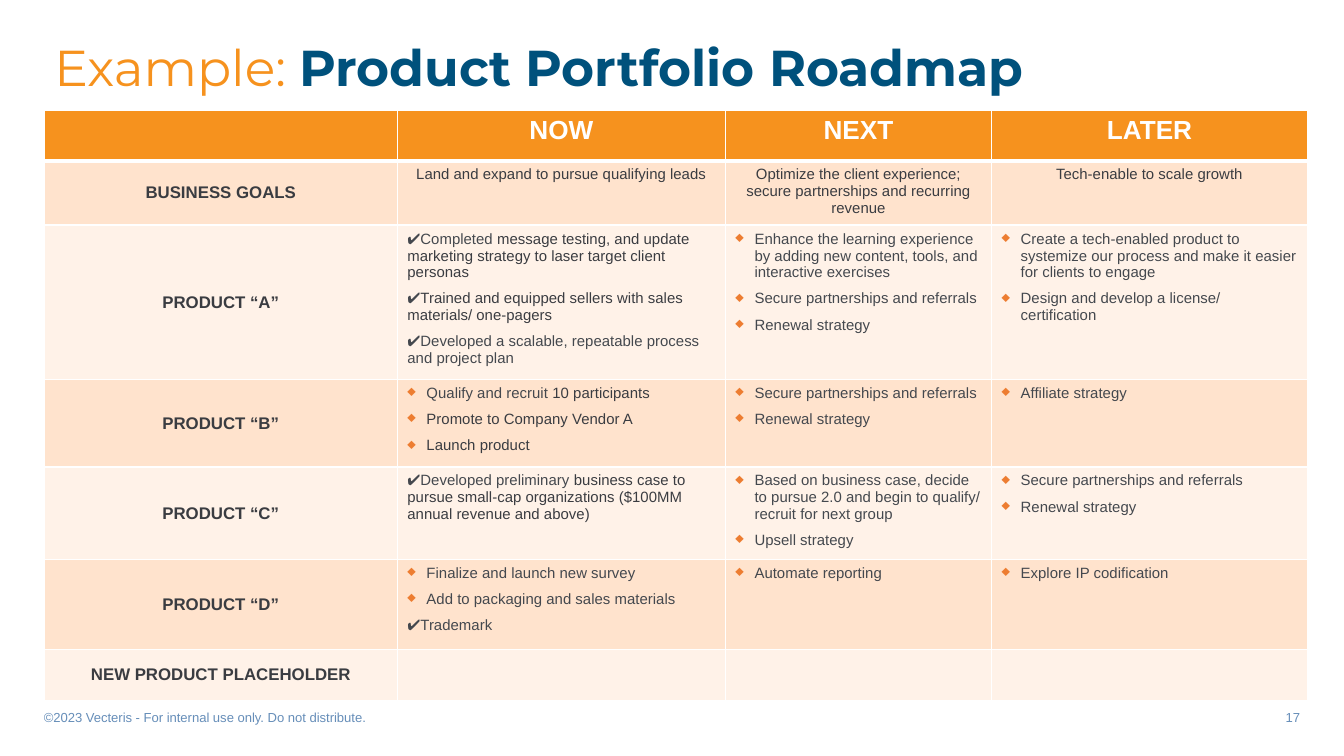
from dataclasses import dataclass

import lxml.etree
import pptx
import pptx.dml.color
import pptx.enum.shapes
import pptx.enum.text
import pptx.oxml
import pptx.oxml.ns
import pptx.util

Cm = pptx.util.Cm
Pt = pptx.util.Pt
Align = pptx.enum.text.PP_ALIGN
Anchor = pptx.enum.text.MSO_ANCHOR
qn = pptx.oxml.ns.qn


@dataclass(frozen=True)
class Theme:
    orange: str = "F6921E"
    navy: str = "00517C"
    steel: str = "668EB9"
    white: str = "FFFFFF"
    dark: str = "3A3C41"
    soft: str = "44484E"
    bullet: str = "ED7D31"
    bands: tuple[str, str] = ("FFE3CD", "FFF2E8")
    title_font: str = "Montserrat"
    body_font: str = "Arial"
    title_size: float = 27
    header_size: float = 14
    label_size: float = 9
    body_size: float = 8
    footer_size: float = 7


@dataclass(frozen=True)
class Item:
    soft: str = ""
    dark: str = ""
    bulleted: bool = True


@dataclass(frozen=True)
class RoadmapRow:
    label: str
    height: float
    horizons: tuple[tuple[Item, ...], ...]


THEME = Theme()
HORIZONS = ("", "NOW", "NEXT", "LATER")
COLUMN_WIDTHS = (6.68, 6.2, 5.03, 5.97)
HEADER_HEIGHT = 0.89
GOALS = RoadmapRow("BUSINESS GOALS", 1.14, (
    (Item(dark="Land and expand to pursue qualifying leads"),),
    (Item(dark="Optimize the client experience; secure partnerships and recurring revenue"),),
    (Item(dark="Tech-enable to scale growth"),),
))
PARTNERSHIPS = Item("Secure partnerships and referrals")
RENEWAL = Item("Renewal strategy")
PRODUCTS = (
    RoadmapRow("PRODUCT “A”", 2.74, (
        (
            Item("✔Completed ", "message testing, and update marketing strategy to laser "
                 "target client personas", False),
            Item("✔", "Trained and equipped sellers with sales materials/ one-pagers", False),
            Item("✔Developed a scalable, repeatable process and project plan", "", False),
        ),
        (
            Item("Enhance the learning experience by adding new content, tools, and "
                 "interactive exercises"),
            PARTNERSHIPS,
            RENEWAL,
        ),
        (
            Item("Create a tech-enabled product to systemize our process and make it "
                 "easier for clients to engage"),
            Item("Design and develop a license/ certification"),
        ),
    )),
    RoadmapRow("PRODUCT “B”", 1.65, (
        (
            Item("Qualify and recruit ", "10 participants"),
            Item(dark="Promote to Company Vendor A"),
            Item(dark="Launch product"),
        ),
        (PARTNERSHIPS, RENEWAL),
        (Item("Affiliate strategy"),),
    )),
    RoadmapRow("PRODUCT “C”", 1.75, (
        (Item("✔Developed preliminary ", "business case to pursue small-cap organizations "
              "($100MM annual revenue and above)", False),),
        (
            Item("Based on business case, decide to pursue 2.0 and begin to qualify/ "
                 "recruit for next group"),
            Item("Upsell strategy"),
        ),
        (PARTNERSHIPS, RENEWAL),
    )),
    RoadmapRow("PRODUCT “D”", 1.7, (
        (
            Item("Finalize and launch new survey"),
            Item("Add to packaging and sales materials"),
            Item("✔Trademark", "", False),
        ),
        (Item("Automate reporting"),),
        (Item("Explore IP codification"),),
    )),
    RoadmapRow("NEW PRODUCT PLACEHOLDER", 0.91, ((), (), ())),
)


def rgb(color: str) -> pptx.dml.color.RGBColor:
    return pptx.dml.color.RGBColor.from_string(color)


def add_run(paragraph, text: str, size: float, color: str, bold: bool = False,
            font: str = THEME.body_font) -> None:
    run = paragraph.add_run()
    run.text = text
    run.font.name = font
    run.font.size = Pt(size)
    run.font.bold = bold
    run.font.color.rgb = rgb(color)


def add_text_line(slide, left: float, top: float, width: float, height: float, align=Align.LEFT):
    frame = slide.shapes.add_textbox(Cm(left), Cm(top), Cm(width), Cm(height)).text_frame
    frame.word_wrap = True
    frame.vertical_anchor = Anchor.MIDDLE
    frame.margin_left = frame.margin_right = Cm(0.19)
    frame.margin_top = frame.margin_bottom = Cm(0.1)
    paragraph = frame.paragraphs[0]
    paragraph.alignment = align
    return paragraph


def add_diamond_bullet(paragraph) -> None:
    properties = paragraph._p.get_or_add_pPr()
    properties.set("marL", str(Cm(0.36)))
    properties.set("indent", str(-Cm(0.36)))
    color = lxml.etree.SubElement(properties, qn("a:buClr"))
    lxml.etree.SubElement(color, qn("a:srgbClr"), val=THEME.bullet)
    lxml.etree.SubElement(properties, qn("a:buChar"), char="♦")


def style_cell(cell, fill: str, top: float = 1, bottom: float = 1) -> None:
    properties = cell._tc.get_or_add_tcPr()
    for side, width in (("L", 1), ("R", 1), ("T", top), ("B", bottom)):
        border = lxml.etree.SubElement(properties, qn(f"a:ln{side}"), w=str(Pt(width)))
        paint = lxml.etree.SubElement(border, qn("a:solidFill"))
        lxml.etree.SubElement(paint, qn("a:srgbClr"), val=THEME.white)
    cell.fill.solid()
    cell.fill.fore_color.rgb = rgb(fill)
    cell.margin_left = cell.margin_right = Cm(0.19)
    cell.margin_top = cell.margin_bottom = Cm(0.1)


def write_centered(cell, text: str, size: float, color: str, bold: bool = False) -> None:
    paragraph = cell.text_frame.paragraphs[0]
    paragraph.alignment = Align.CENTER
    add_run(paragraph, text, size, color, bold)


def write_items(cell, items: tuple[Item, ...]) -> None:
    frame = cell.text_frame
    for index, item in enumerate(items):
        paragraph = frame.add_paragraph() if index else frame.paragraphs[0]
        if item.bulleted:
            add_diamond_bullet(paragraph)
        if index:
            paragraph.space_before = Pt(5)
        for text, color in ((item.soft, THEME.soft), (item.dark, THEME.dark)):
            if text:
                add_run(paragraph, text, THEME.body_size, color)


def add_roadmap(slide) -> None:
    rows = (GOALS, *PRODUCTS)
    heights = (HEADER_HEIGHT, *(row.height for row in rows))
    roadmap = slide.shapes.add_table(
        len(heights), len(COLUMN_WIDTHS), Cm(0.83), Cm(2.08),
        Cm(sum(COLUMN_WIDTHS)), Cm(sum(heights))).table
    for column, width in zip(roadmap.columns, COLUMN_WIDTHS):
        column.width = Cm(width)
    for line, height in zip(roadmap.rows, heights):
        line.height = Cm(height)

    for column, horizon in enumerate(HORIZONS):
        header = roadmap.cell(0, column)
        style_cell(header, THEME.orange, bottom=3)
        if horizon:
            write_centered(header, horizon, THEME.header_size, THEME.white, True)

    for number, row in enumerate(rows, 1):
        for column in range(len(HORIZONS)):
            style_cell(roadmap.cell(number, column), THEME.bands[(number - 1) % 2],
                       top=3 if number == 1 else 1)
        label = roadmap.cell(number, 0)
        label.vertical_anchor = Anchor.MIDDLE
        write_centered(label, row.label, THEME.label_size, THEME.dark, True)
        for column, items in enumerate(row.horizons, 1):
            if row is GOALS:
                write_centered(roadmap.cell(number, column), items[0].dark,
                               THEME.body_size, THEME.dark)
            else:
                write_items(roadmap.cell(number, column), items)


def add_footer(slide) -> None:
    rule = slide.shapes.add_connector(
        pptx.enum.shapes.MSO_CONNECTOR.STRAIGHT, Cm(0.84), Cm(13.03), Cm(24.56), Cm(13.03))
    rule.line.color.rgb = rgb(THEME.steel)
    rule.line.width = Pt(1)
    lxml.etree.SubElement(rule._element.spPr, qn("a:effectLst"))
    notice = add_text_line(slide, 0.64, 13.31, 10.16, 0.48)
    add_run(notice, "©2023 Vecteris - For internal use only. Do not distribute.",
            THEME.footer_size, THEME.steel)
    page_number = add_text_line(slide, 14.6, 13.31, 10.16, 0.48, Align.RIGHT)
    add_run(page_number, "17", THEME.footer_size, THEME.steel)


def main() -> None:
    deck = pptx.Presentation()
    deck.slide_width, deck.slide_height = Cm(25.4), Cm(14.29)
    slide = deck.slides.add_slide(deck.slide_layouts[6])
    add_footer(slide)
    title = add_text_line(slide, 0.84, 0.61, 19.58, 1.45)
    title.line_spacing = 0.9
    add_run(title, "Example: ", THEME.title_size, THEME.orange, font=THEME.title_font)
    add_run(title, "Product Portfolio Roadmap", THEME.title_size, THEME.navy, True,
            THEME.title_font)
    add_roadmap(slide)
    deck.save("out.pptx")


if __name__ == "__main__":
    main()
